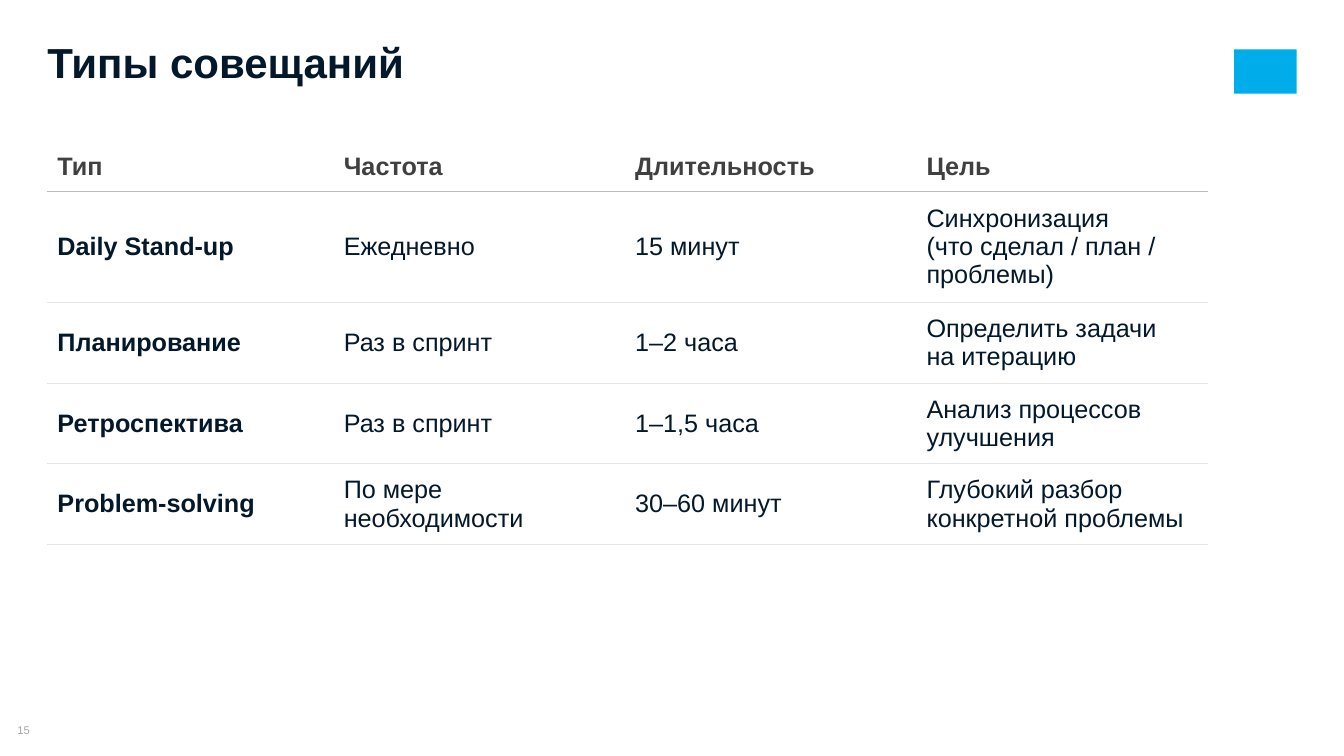
from dataclasses import dataclass

from lxml import etree
from pptx import Presentation
from pptx.dml.color import RGBColor
from pptx.enum import shapes, text
from pptx.oxml import ns
from pptx.util import Inches, Pt


@dataclass(frozen=True)
class Theme:
    font: str = "Arial"
    ink: str = "03182B"
    head: str = "404040"
    rule: str = "BBBBBB"
    line: str = "E5E5E5"
    paper: str = "FFFFFF"
    mark: str = "00ADEB"
    faint: str = "A6A6A6"
    title: int = 30
    body: int = 18
    note: int = 8
    stroke: float = 0.75


THEME = Theme()
TITLE = "Типы совещаний"
ROWS = [
    ("Тип", "Частота", "Длительность", "Цель"),
    ("Daily Stand-up", "Ежедневно", "15 минут",
     "Синхронизация \n(что сделал / план / проблемы)"),
    ("Планирование", "Раз в спринт", "1–2 часа",
     "Определить задачи \nна итерацию"),
    ("Ретроспектива", "Раз в спринт", "1–1,5 часа",
     "Анализ процессов улучшения"),
    ("Problem-solving", "По мере необходимости", "30–60 минут",
     "Глубокий разбор конкретной проблемы"),
]
WIDTHS = [2.84, 2.89, 2.89, 2.89]
HEIGHTS = [0.48, 1.05, 0.77, 0.77, 0.77]


def write(para, words, size, color, bold=False):
    para.text = words
    font = para.font
    font.name = THEME.font
    font.size = Pt(size)
    font.bold = bold
    font.color.rgb = RGBColor.from_string(color)


def trim(frame, anchor):
    frame.margin_left = frame.margin_right = 0
    frame.margin_top = frame.margin_bottom = 0
    frame.word_wrap = True
    frame.vertical_anchor = anchor


def add_title(slide):
    title = slide.shapes.title
    title.left, title.top = Inches(0.47), Inches(0.46)
    title.width, title.height = Inches(10.51), Inches(0.41)
    frame = title.text_frame
    trim(frame, text.MSO_ANCHOR.TOP)
    frame.auto_size = text.MSO_AUTO_SIZE.SHAPE_TO_FIT_TEXT
    para = frame.paragraphs[0]
    write(para, TITLE, THEME.title, THEME.ink, True)
    para.alignment = text.PP_ALIGN.LEFT
    para.line_spacing = 0.8


def add_mark(slide):
    mark = slide.shapes.add_shape(
        shapes.MSO_SHAPE.RECTANGLE,
        Inches(12.24), Inches(0.49), Inches(0.62), Inches(0.44))
    mark.shadow.inherit = False
    mark.fill.solid()
    mark.fill.fore_color.rgb = RGBColor.from_string(THEME.mark)
    mark.line.fill.background()


def add_number(slide):
    box = slide.shapes.add_textbox(
        0, Inches(7.18), Inches(0.47), Inches(0.13))
    trim(box.text_frame, text.MSO_ANCHOR.MIDDLE)
    para = box.text_frame.paragraphs[0]
    write(para, "15", THEME.note, THEME.faint)
    para.alignment = text.PP_ALIGN.CENTER


def add_edge(cell, side, color):
    edge = etree.Element(ns.qn(f"a:{side}"), w=str(Pt(THEME.stroke)))
    fill = etree.SubElement(edge, ns.qn("a:solidFill"))
    etree.SubElement(fill, ns.qn("a:srgbClr"), val=color)
    cell._tc.get_or_add_tcPr().insert(0, edge)


def fill_cell(cell, words, row, col):
    cell.fill.solid()
    cell.fill.fore_color.rgb = RGBColor.from_string(THEME.paper)
    cell.vertical_anchor = text.MSO_ANCHOR.MIDDLE
    cell.margin_left = cell.margin_right = Inches(0.1)
    cell.margin_top = cell.margin_bottom = Inches(0.1)
    color = THEME.ink if row else THEME.head
    bold = row == 0 or col == 0
    write(cell.text_frame.paragraphs[0], words, THEME.body, color, bold)
    add_edge(cell, "lnB", THEME.line if row else THEME.rule)
    if row:
        add_edge(cell, "lnT", THEME.rule if row == 1 else THEME.line)


def add_grid(slide):
    table = slide.shapes.add_table(
        len(ROWS), len(WIDTHS), Inches(0.47), Inches(1.4),
        Inches(sum(WIDTHS)), Inches(sum(HEIGHTS))).table
    table.first_row = table.horz_banding = False
    for column, width in zip(table.columns, WIDTHS):
        column.width = Inches(width)
    for line, height in zip(table.rows, HEIGHTS):
        line.height = Inches(height)
    for row, items in enumerate(ROWS):
        for col, words in enumerate(items):
            fill_cell(table.cell(row, col), words, row, col)


def main():
    deck = Presentation()
    deck.slide_width, deck.slide_height = Inches(13.33), Inches(7.5)
    slide = deck.slides.add_slide(deck.slide_layouts.get_by_name("Title Only"))
    add_mark(slide)
    add_number(slide)
    add_title(slide)
    add_grid(slide)
    deck.save("out.pptx")


if __name__ == "__main__":
    main()
